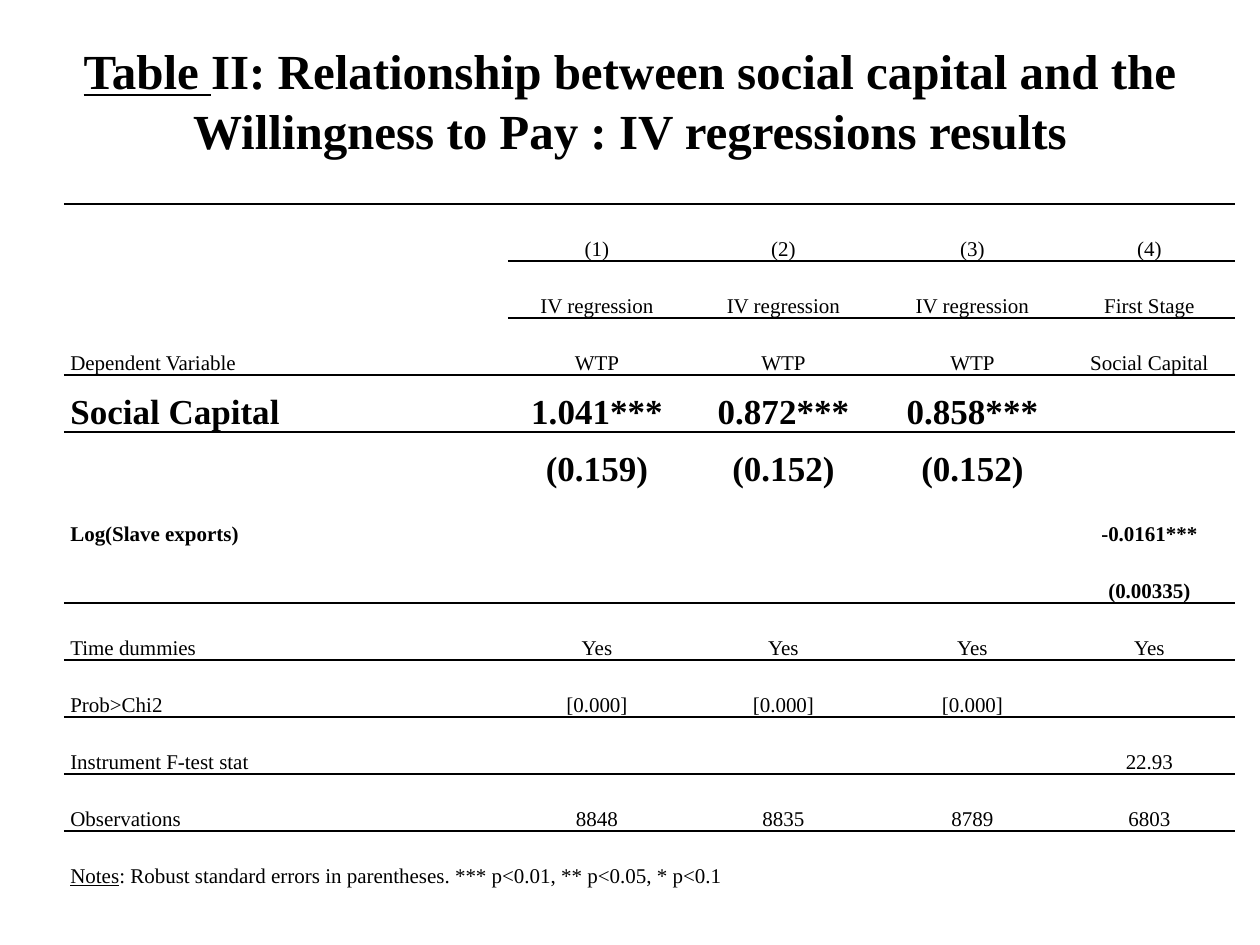
from lxml import etree
from pptx import Presentation
from pptx import util as u
from pptx.dml.color import RGBColor
from pptx.enum import text
from pptx.oxml.ns import qn

EMU_PER_PX = 914400 / 126
THEME = {
    "font": "Times New Roman",
    "ink": "000000",
    "title": 28,
    "title_leading": 34,
    "body": 12,
    "key": 20,
    "rule": 1,
    "spacing": 1.15,
    "plain_style": "{2D5ABB26-0587-4C30-8999-92F81FD0307C}",
}

TITLE = [
    ("Table ", True),
    ("II: Relationship between social capital and the "
     "Willingness to Pay : IV regressions results", False),
]
NOTES = [
    ("Notes", True),
    (": Robust standard errors in parentheses. "
     "*** p<0.01, ** p<0.05, * p<0.1", False),
]

COLUMNS = [444, 178, 195, 183, 171]
ROW_HEIGHT = 57
ROWS = [
    ["", "(1)", "(2)", "(3)", "(4)"],
    ["", "IV regression", "IV regression", "IV regression", "First Stage"],
    ["Dependent Variable", "WTP", "WTP", "WTP", "Social Capital"],
    ["Social Capital", "1.041***", "0.872***", "0.858***", ""],
    ["", "(0.159)", "(0.152)", "(0.152)", ""],
    ["Log(Slave exports)", "", "", "", "-0.0161***"],
    ["", "", "", "", "(0.00335)"],
    ["Time dummies", "Yes", "Yes", "Yes", "Yes"],
    ["Prob>Chi2", "[0.000]", "[0.000]", "[0.000]", ""],
    ["Instrument F-test stat", "", "", "", "22.93"],
    ["Observations", "8848", "8835", "8789", "6803"],
    [NOTES, "", "", "", ""],
]
KEY_ROWS = (3, 4)
BOLD_ROWS = (3, 4, 5, 6)
# Row edge -> first column its rule covers (edge 0 is the table top)
RULES = {0: 0, 1: 1, 2: 1, 3: 0, 7: 0, 8: 0, 9: 0, 10: 0, 11: 0}


def px(n):
    return u.Emu(round(n * EMU_PER_PX))


def set_all(obj, values):
    for name, value in values.items():
        setattr(obj, name, value)


def write(p, runs, size, bold=False, **paragraph):
    """Fill a paragraph with (text, underlined) runs."""
    set_all(p, paragraph)
    for words, underline in runs:
        r = p.add_run()
        r.text = words
        set_all(r.font, {"name": THEME["font"], "size": u.Pt(size),
                         "bold": bold, "underline": underline})
        r.font.color.rgb = RGBColor.from_string(THEME["ink"])


def add_title(s):
    sp = s.shapes.add_textbox(px(63), px(41), px(1134), px(117))
    tf = sp.text_frame
    set_all(tf, {"word_wrap": True,
                 "vertical_anchor": text.MSO_ANCHOR.MIDDLE})
    write(tf.paragraphs[0], TITLE, THEME["title"], bold=True,
          alignment=text.PP_ALIGN.CENTER,
          line_spacing=u.Pt(THEME["title_leading"]))


def add_rule(cell, side):
    ln = etree.SubElement(cell._tc.get_or_add_tcPr(), qn(f"a:ln{side}"),
                          w=str(u.Pt(THEME["rule"])))
    fill = etree.SubElement(ln, qn("a:solidFill"))
    etree.SubElement(fill, qn("a:srgbClr"), val=THEME["ink"])


def format_cell(cell, row, col):
    set_all(cell, {"margin_left": u.Inches(0.05),
                   "margin_right": u.Inches(0.05),
                   "margin_top": 0, "margin_bottom": 0,
                   "vertical_anchor": text.MSO_ANCHOR.BOTTOM})
    for edge, side in ((row, "T"), (row + 1, "B")):
        if edge in RULES and col >= RULES[edge]:
            add_rule(cell, side)
    cell.fill.background()


def add_results_table(s):
    frame = s.shapes.add_table(len(ROWS), len(COLUMNS), px(64), px(204),
                               px(sum(COLUMNS)), px(ROW_HEIGHT * len(ROWS)))
    table = frame.table
    set_all(table, {"first_row": False, "horz_banding": False})
    style = frame._element.find(".//" + qn("a:tableStyleId"))
    style.text = THEME["plain_style"]

    for column, width in zip(table.columns, COLUMNS):
        column.width = px(width)
    for i, values in enumerate(ROWS):
        table.rows[i].height = px(ROW_HEIGHT)
        size = THEME["key"] if i in KEY_ROWS else THEME["body"]
        for j, value in enumerate(values):
            cell = table.cell(i, j)
            format_cell(cell, i, j)
            if value:
                runs = [(value, False)] if isinstance(value, str) else value
                align = text.PP_ALIGN.CENTER if j else text.PP_ALIGN.LEFT
                write(cell.text_frame.paragraphs[0], runs, size,
                      bold=i in BOLD_ROWS, alignment=align,
                      line_spacing=THEME["spacing"])

    # The notes run under the first four columns
    last = len(ROWS) - 1
    table.cell(last, 0).merge(table.cell(last, 3))


def main():
    prs = Presentation()
    set_all(prs, {"slide_width": px(1260), "slide_height": px(945)})
    s = prs.slides.add_slide(prs.slide_layouts[6])
    add_title(s)
    add_results_table(s)
    prs.save("out.pptx")


if __name__ == "__main__":
    main()
